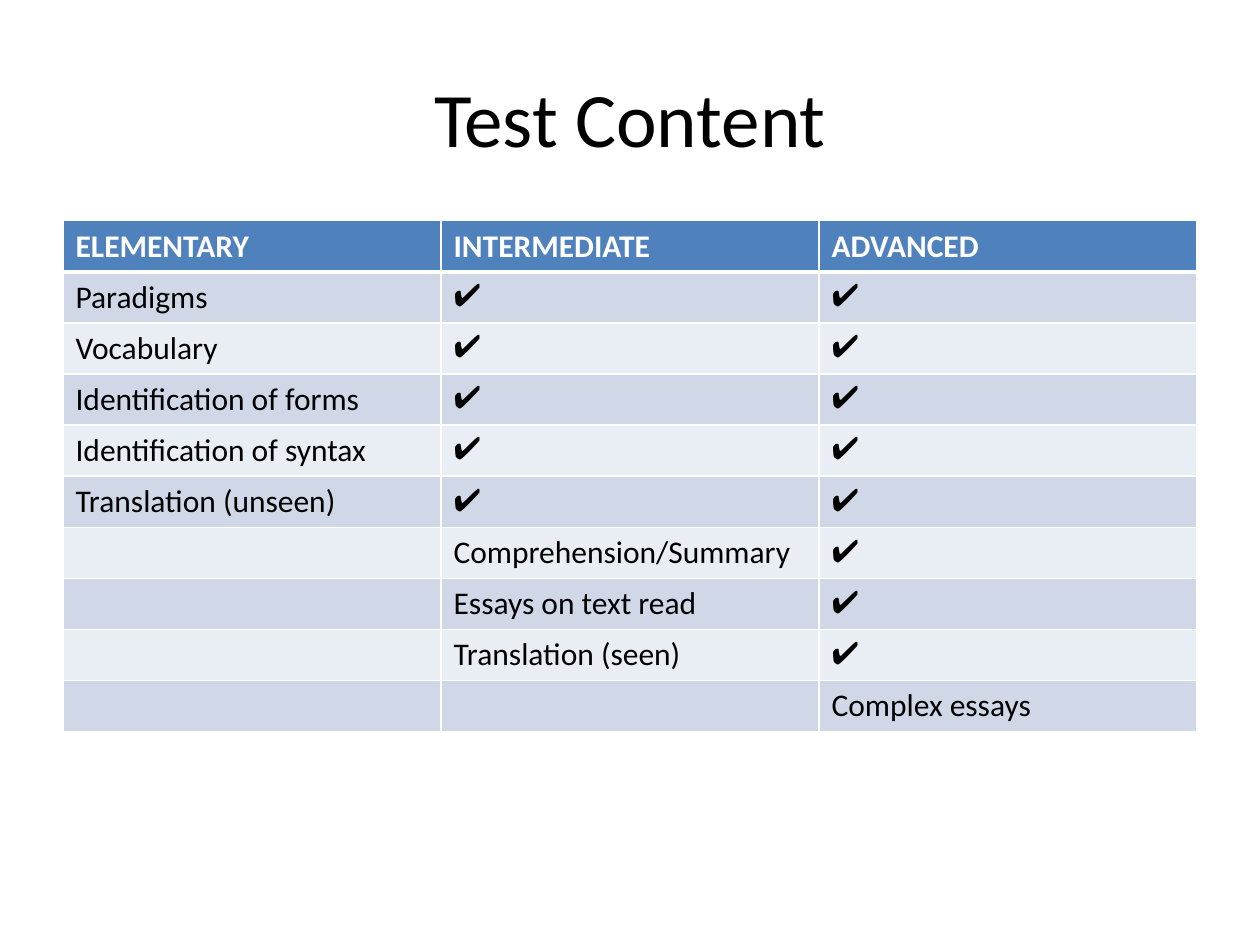
"""Build a slide with a table of test content by level."""
from lxml.etree import SubElement as Sub
from pptx import Presentation
from pptx.dml.color import RGBColor as Rgb
from pptx.enum.text import MSO_ANCHOR as Anchor, PP_ALIGN as Align
from pptx.oxml.ns import qn
from pptx.util import Cm, Pt

TITLE = "Test Content"
TICK = "✔"
ROWS = [
    ("ELEMENTARY", "INTERMEDIATE", "ADVANCED"),
    ("Paradigms", TICK, TICK),
    ("Vocabulary", TICK, TICK),
    ("Identification of forms", TICK, TICK),
    ("Identification of syntax", TICK, TICK),
    ("Translation (unseen)", TICK, TICK),
    ("", "Comprehension/Summary", TICK),
    ("", "Essays on text read", TICK),
    ("", "Translation (seen)", TICK),
    ("", "", "Complex essays"),
]
HUES = {
    "text": "000000",
    "line": "FFFFFF",
    "head": "4F81BD",
    "odd": "D0D8E8",
    "even": "E9EDF4",
}
LEFT, WIDE = 1.27, 22.86
TOP, HIGH = 4.45, 1.03


def write(frame, text, size=18, font="Calibri", hue="text", bold=False, align=Align.LEFT):
    para = frame.paragraphs[0]
    para.alignment = align
    para.font.size = Pt(size)
    if text:
        run = para.add_run()
        run.text = text
        run.font.size = Pt(size)
        run.font.name = font
        run.font.bold = bold
        run.font.color.rgb = Rgb.from_string(HUES[hue])


def edge(cell, **sides):
    props = cell._tc.get_or_add_tcPr()
    for side, width in sides.items():
        line = Sub(props, qn(f"a:ln{side}"), w=str(Pt(width)))
        fill = Sub(line, qn("a:solidFill"))
        Sub(fill, qn("a:srgbClr"), val=HUES["line"])


def paint(cell, hue):
    cell.fill.solid()
    cell.fill.fore_color.rgb = Rgb.from_string(HUES[hue])


def main():
    deck = Presentation()
    deck.slide_width, deck.slide_height = Cm(25.4), Cm(19.05)
    slide = deck.slides.add_slide(deck.slide_layouts[5])

    title = slide.shapes.title
    title.left, title.top = Cm(LEFT), Cm(0.76)
    title.width, title.height = Cm(WIDE), Cm(3.18)
    title.text_frame.vertical_anchor = Anchor.MIDDLE
    write(title.text_frame, TITLE, size=44, align=Align.CENTER)

    count = len(ROWS)
    table = slide.shapes.add_table(
        count, len(ROWS[0]), Cm(LEFT), Cm(TOP), Cm(WIDE), Cm(HIGH * count)
    ).table
    for r, row in enumerate(ROWS):
        table.rows[r].height = Cm(HIGH)
        head = r == 0
        band = "head" if head else "odd" if r % 2 else "even"
        for c, text in enumerate(row):
            cell = table.cell(r, c)
            edge(cell, L=1, R=1, T=3 if r == 1 else 1, B=3 if head else 1)
            paint(cell, band)
            write(
                cell.text_frame,
                text,
                font="Arial" if text == TICK else "Calibri",
                hue="line" if head else "text",
                bold=head,
            )
    deck.save("out.pptx")


if __name__ == "__main__":
    main()
